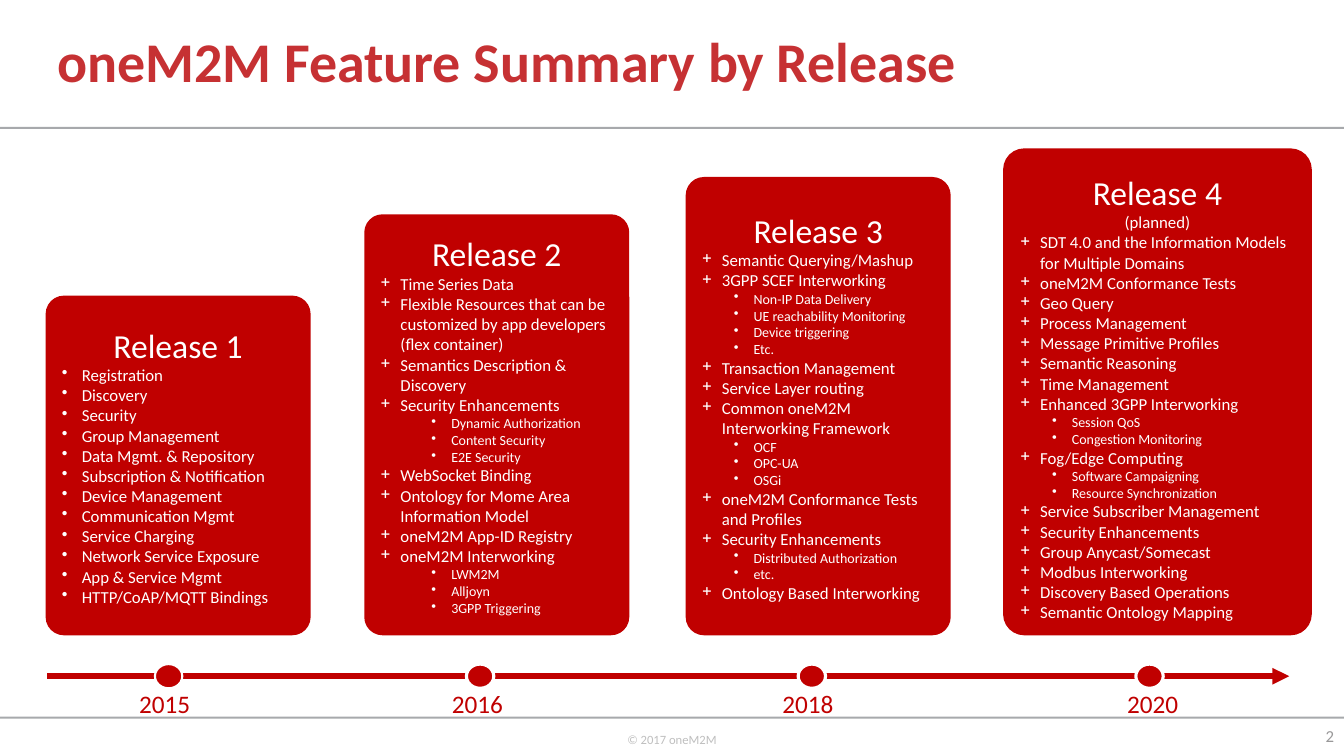
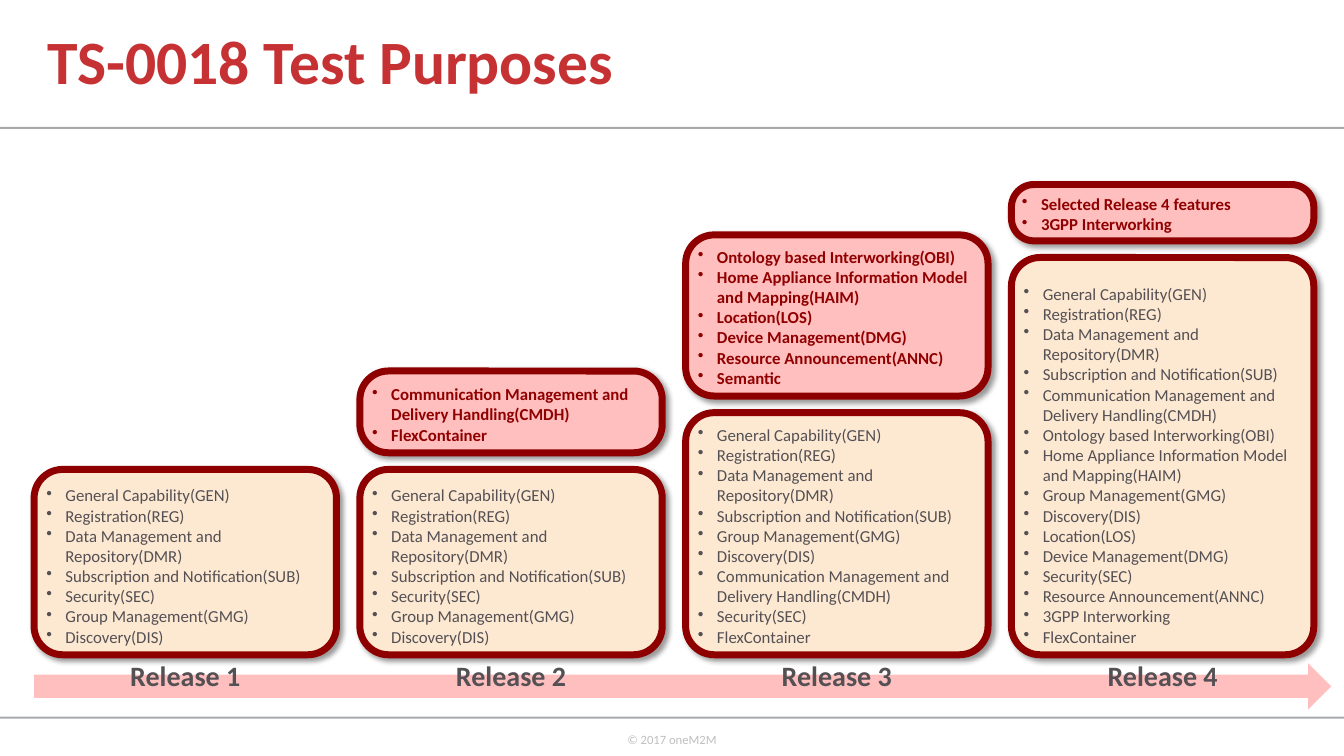
from dataclasses import dataclass

from lxml import etree
from pptx import Presentation
from pptx.dml.color import RGBColor
from pptx.enum import shapes as kinds, text as texts
from pptx.oxml.ns import qn
from pptx.util import Cm, Pt


@dataclass(frozen=True)
class Theme:
    font: str = "Calibri"
    title: str = "C63133"
    band: str = "A7A9AC"
    footer: str = "BFBFBF"
    number: str = "999899"
    red: str = "C00000"
    white: str = "FFFFFF"
    outline: str = "8E0000"
    new_text: str = "900000"
    pink: str = "FFBFBF"
    cream: str = "FDE9D2"
    gray: str = "545054"
    heading: int = 24
    label: int = 20
    year: int = 18
    body: int = 12
    detail: int = 10
    small: int = 9


THEME = Theme()
ALIGN = texts.PP_ALIGN
ANCHOR = texts.MSO_ANCHOR
SHAPE = kinds.MSO_SHAPE
SLIDE_WIDTH, SLIDE_HEIGHT = 33.87, 19.05
TITLE_HEIGHT = 3.25
FOOTER = "© 2017 oneM2M"

# Tuples inside a list of features hold its second level.
RELEASES = [
    dict(name="Release 1", left=1.19, top=7.49, width=6.6, bullet="•", features=[
        "Registration", "Discovery", "Security", "Group Management",
        "Data Mgmt. & Repository", "Subscription & Notification",
        "Device Management", "Communication Mgmt", "Service Charging",
        "Network Service Exposure", "App & Service Mgmt",
        "HTTP/CoAP/MQTT Bindings"]),
    dict(name="Release 2", left=9.22, top=5.44, width=6.6, detail_indent=1.78, features=[
        "Time Series Data",
        "Flexible Resources that can be customized by app developers (flex container)",
        "Semantics Description & Discovery", "Security Enhancements",
        ("Dynamic Authorization", "Content Security", "E2E Security"),
        "WebSocket Binding", "Ontology for Mome Area Information Model",
        "oneM2M App-ID Registry", "oneM2M Interworking",
        ("LWM2M", "Alljoyn", "3GPP Triggering")]),
    dict(name="Release 3", left=17.32, top=4.5, width=6.6, features=[
        "Semantic Querying/Mashup", "3GPP SCEF Interworking",
        ("Non-IP Data Delivery", "UE reachability Monitoring",
         "Device triggering", "Etc."),
        "Transaction Management", "Service Layer routing",
        "Common oneM2M Interworking Framework", ("OCF", "OPC-UA", "OSGi"),
        "oneM2M Conformance Tests and Profiles", "Security Enhancements",
        ("Distributed Authorization", "etc."), "Ontology Based Interworking"]),
    dict(name="Release 4", note="(planned)", left=25.32, top=3.78, width=7.7,
         top_inset=0.38, features=[
             "SDT 4.0 and the Information Models for Multiple Domains",
             "oneM2M Conformance Tests", "Geo Query", "Process Management",
             "Message Primitive Profiles", "Semantic Reasoning",
             "Time Management", "Enhanced 3GPP Interworking",
             ("Session QoS", "Congestion Monitoring"), "Fog/Edge Computing",
             ("Software Campaigning", "Resource Synchronization"),
             "Service Subscriber Management", "Security Enhancements",
             "Group Anycast/Somecast", "Modbus Interworking",
             "Discovery Based Operations", "Semantic Ontology Mapping"]),
]
CARD_BOTTOM = 15.97

# Year, centre of its dot, centre of its label, outline of the dot
MILESTONES = [("2015", 4.25, 4.15, 1.5), ("2016", 12.1, 12.03, 2.25),
              ("2018", 20.46, 20.36, 2.25), ("2020", 28.97, 29.05, 2.25)]

GEN, REG = "General Capability(GEN)", "Registration(REG)"
DMR = "Data Management and Repository(DMR)"
SUB = "Subscription and Notification(SUB)"
SEC, GMG, DIS = "Security(SEC)", "Group Management(GMG)", "Discovery(DIS)"
CMDH = "Communication Management and Delivery Handling(CMDH)"
FLEX = "FlexContainer"
OBI = "Ontology based Interworking(OBI)"
HAIM = "Home Appliance Information Model and Mapping(HAIM)"
LOS, DMG = "Location(LOS)", "Device Management(DMG)"
ANNC, INTERWORKING = "Resource Announcement(ANNC)", "3GPP Interworking"
COMMON = [GEN, REG, DMR, SUB]
FIRST_TESTS = COMMON + [SEC, GMG, DIS]

# Name, height and list of the lower box, height and list of the new tests
TEST_COLUMNS = [
    ("Release 1", 4.67, FIRST_TESTS, 0, []),
    ("Release 2", 4.67, FIRST_TESTS, 2.06, [CMDH, FLEX]),
    ("Release 3", 6.1, COMMON + [GMG, DIS, CMDH, SEC, FLEX],
     4.06, [OBI, HAIM, LOS, DMG, ANNC, "Semantic"]),
    ("Release 4", 10.01,
     COMMON + [CMDH, OBI, HAIM, GMG, DIS, LOS, DMG, SEC, ANNC, INTERWORKING, FLEX],
     1.42, ["Selected Release 4 features", INTERWORKING]),
]
COLUMN_LEFT, COLUMN_STEP, COLUMN_WIDTH = 0.86, 8.21, 7.62
COLUMN_BOTTOM, COLUMN_GAP = 16.5, 0.42
CORNER, CORNER_LIMIT = 0.72, 0.4


def rgb(value):
    return RGBColor.from_string(value)


def write(frame, text, *, size, color, bold=False, align=ALIGN.LEFT,
          bullet=None, indent=0.5, hanging=0.5, spacing=None):
    """Fill the empty first paragraph of the frame, or add one after the last."""
    paragraph = frame.paragraphs[0]
    if paragraph.runs:
        paragraph = frame.add_paragraph()
    paragraph.alignment = align
    if spacing:
        paragraph.line_spacing = spacing
    if bullet:
        properties = paragraph._p.get_or_add_pPr()
        properties.set("marL", str(Cm(indent)))
        properties.set("indent", str(-Cm(hanging)))
        etree.SubElement(properties, qn("a:buChar"), char=bullet)
    run = paragraph.add_run()
    run.text = text
    run.font.name = THEME.font
    run.font.size = Pt(size)
    run.font.bold = bold
    run.font.color.rgb = rgb(color)


def add_label(slide, text, left, top, width, height, anchor=ANCHOR.TOP, **style):
    box = slide.shapes.add_textbox(Cm(left), Cm(top), Cm(width), Cm(height))
    box.text_frame.word_wrap = True
    box.text_frame.vertical_anchor = anchor
    write(box.text_frame, text, **style)
    return box


def add_shape(slide, kind, left, top, width, height, fill, line=None, weight=0):
    shape = slide.shapes.add_shape(kind, Cm(left), Cm(top), Cm(width), Cm(height))
    shape.shadow.inherit = False
    shape.fill.solid()
    shape.fill.fore_color.rgb = rgb(fill)
    if line:
        shape.line.color.rgb = rgb(line)
        shape.line.width = Pt(weight)
    else:
        shape.line.fill.background()
    return shape


def add_outer_shadow(shape):
    effects = shape._element.spPr.find(qn("a:effectLst"))
    shadow = etree.SubElement(effects, qn("a:outerShdw"), blurRad=str(Pt(4)),
                              dist=str(Pt(3)), dir="2700000", algn="tl",
                              rotWithShape="0")
    color = etree.SubElement(shadow, qn("a:srgbClr"), val="000000")
    etree.SubElement(color, qn("a:alpha"), val="40000")


def furnish_layout(layout, slide):
    """Draw the bands and the footer on a slide and move them to its layout."""
    parts = [add_shape(slide, SHAPE.RECTANGLE, 0, top, SLIDE_WIDTH, 0.05, THEME.band)
             for top in (3.2, 18.06)]
    width = 4
    parts.append(add_label(slide, FOOTER, (SLIDE_WIDTH - width) / 2, 18.31, width, 1.02,
                           size=THEME.small, color=THEME.footer, align=ALIGN.CENTER))
    for part in parts:
        layout.shapes._spTree.append(part._element)


def set_title(slide, text, left, size):
    title = slide.shapes.title
    title.left, title.top = Cm(left), Cm(0)
    title.width, title.height = Cm(28.3), Cm(TITLE_HEIGHT)
    title.text_frame.auto_size = texts.MSO_AUTO_SIZE.NONE
    title.text_frame.vertical_anchor = ANCHOR.MIDDLE
    write(title.text_frame, text, size=size, color=THEME.title, bold=True, spacing=0.9)


def add_release_card(slide, release):
    top = release["top"]
    card = add_shape(slide, SHAPE.ROUNDED_RECTANGLE, release["left"], top,
                     release["width"], CARD_BOTTOM - top, THEME.red, THEME.red, 2.25)
    card.adjustments[0] = 0.064
    frame = card.text_frame
    frame.word_wrap = True
    frame.vertical_anchor = ANCHOR.MIDDLE
    frame.margin_top = Cm(release.get("top_inset", 0.13))
    write(frame, release["name"], size=THEME.heading, color=THEME.white,
          align=ALIGN.CENTER)
    if "note" in release:
        write(frame, release["note"], size=THEME.body, color=THEME.white,
              align=ALIGN.CENTER)
    for feature in release["features"]:
        if isinstance(feature, tuple):
            for detail in feature:
                write(frame, detail, size=THEME.detail, color=THEME.white,
                      bullet="•", indent=release.get("detail_indent", 1.3))
        else:
            write(frame, feature, size=THEME.body, color=THEME.white,
                  bullet=release.get("bullet", "+"))


def add_timeline(slide):
    middle, dot_width, dot_height, label_width = 17.04, 0.69, 0.61, 2.4
    line = slide.shapes.add_connector(kinds.MSO_CONNECTOR.STRAIGHT,
                                      Cm(1.19), Cm(middle), Cm(32.49), Cm(middle))
    line.line.color.rgb = rgb(THEME.red)
    line.line.width = Pt(4)
    etree.SubElement(line.line._get_or_add_ln(), qn("a:tailEnd"), type="triangle")
    etree.SubElement(line._element.spPr, qn("a:effectLst"))
    for year, dot_center, label_center, weight in MILESTONES:
        add_shape(slide, SHAPE.OVAL, dot_center - dot_width / 2, middle - dot_height / 2,
                  dot_width, dot_height, THEME.red, THEME.white, weight)
        add_label(slide, year, label_center - label_width / 2, 17.22, label_width, 1.02,
                  size=THEME.year, color=THEME.red, align=ALIGN.CENTER)


def add_test_box(slide, left, bottom, height, tests, fill, **style):
    box = add_shape(slide, SHAPE.ROUNDED_RECTANGLE, left, bottom - height,
                    COLUMN_WIDTH, height, fill, THEME.outline, 5)
    box.adjustments[0] = min(CORNER / min(height, COLUMN_WIDTH), CORNER_LIMIT)
    add_outer_shadow(box)
    frame = box.text_frame
    frame.word_wrap = True
    frame.vertical_anchor = ANCHOR.BOTTOM
    frame.margin_left = frame.margin_right = Cm(0.1)
    frame.margin_top = frame.margin_bottom = 0
    for test in tests:
        write(frame, test, size=THEME.body, bullet="•", indent=0.48, hanging=0.48, **style)


def build_features(slide):
    set_title(slide, "oneM2M Feature Summary by Release", 1.19, 40)
    for release in RELEASES:
        add_release_card(slide, release)
    add_timeline(slide)
    add_label(slide, "2", 32.49, 18.03, 1.38, 1.02, anchor=ANCHOR.MIDDLE,
              size=THEME.body, color=THEME.number, align=ALIGN.RIGHT)


def build_tests(slide):
    set_title(slide, "TS-0018 Test Purposes", 0.94, 44)
    add_shape(slide, SHAPE.RIGHT_ARROW, COLUMN_LEFT, 16.71, 32.69, 1.17, THEME.pink)
    for index, (name, height, tests, new_height, new_tests) in enumerate(TEST_COLUMNS):
        left = COLUMN_LEFT + index * COLUMN_STEP
        add_test_box(slide, left, COLUMN_BOTTOM, height, tests, THEME.cream,
                     color=THEME.gray)
        if new_tests:
            add_test_box(slide, left, COLUMN_BOTTOM - height - COLUMN_GAP, new_height,
                         new_tests, THEME.pink, color=THEME.new_text, bold=True)
        add_label(slide, name, left, 16.48, COLUMN_WIDTH, 1.12, size=THEME.label,
                  color=THEME.gray, bold=True, align=ALIGN.CENTER)


def main():
    presentation = Presentation()
    presentation.slide_width, presentation.slide_height = Cm(SLIDE_WIDTH), Cm(SLIDE_HEIGHT)
    layout = presentation.slide_layouts[5]
    features, tests = (presentation.slides.add_slide(layout) for _ in range(2))
    furnish_layout(layout, features)
    build_features(features)
    build_tests(tests)
    presentation.save("out.pptx")


if __name__ == "__main__":
    main()
